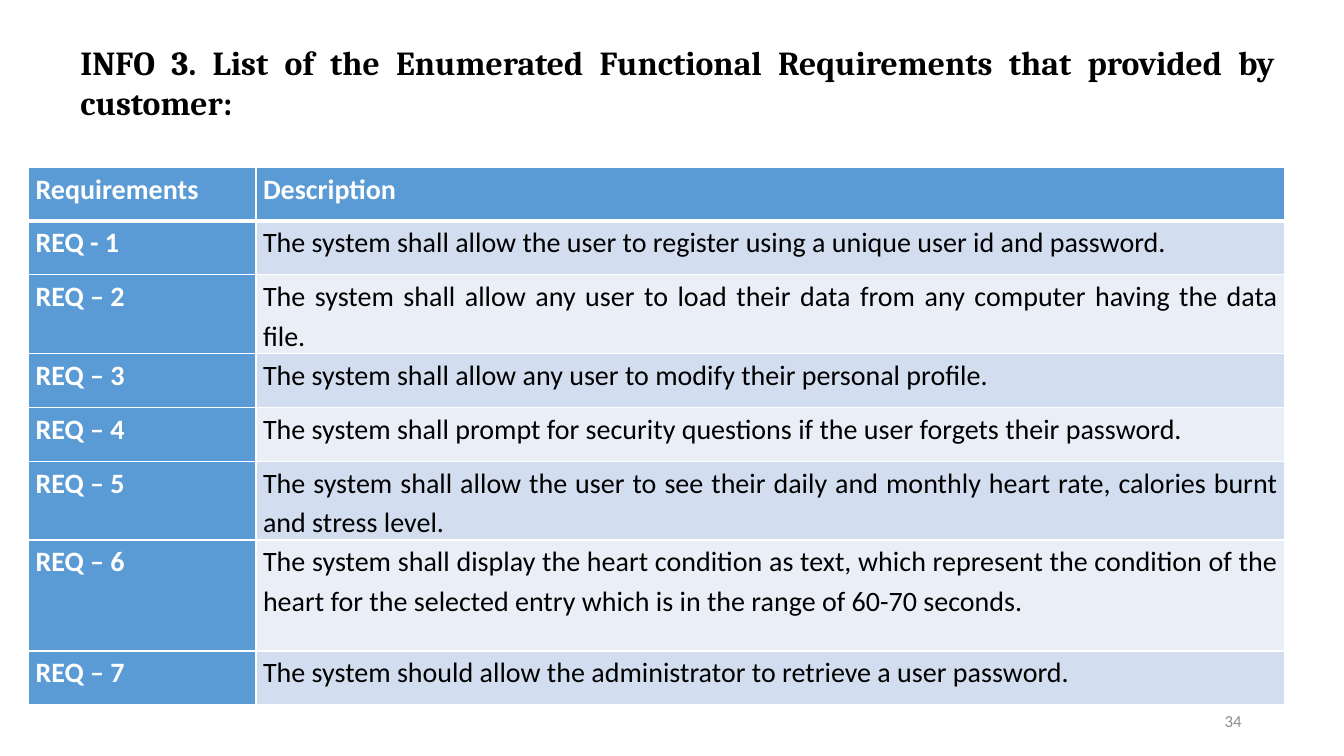
import pptx
import pptx.dml.color
import pptx.enum.text
import pptx.oxml
import pptx.oxml.ns
import pptx.util

Pt = pptx.util.Pt
ALIGN = pptx.enum.text.PP_ALIGN
ANCHOR = pptx.enum.text.MSO_ANCHOR

WHITE, BLACK, GRAY = "FFFFFF", "000000", "8C8C8C"
BLUE, BANDS = "5B9BD5", ("D2DEEF", "EAEFF7")
COLUMN_WIDTHS = (162.5, 735)
ROW_HEIGHT, TALL_ROW_HEIGHT, TALL_ROW = 38.4, 79.2, 6

HEADER = ("Requirements", "Description")
REQUIREMENTS = [
    ("REQ - 1", "The system shall allow the user to register using a unique user id and password."),
    ("REQ – 2", "The system shall allow any user to load their data from any computer having the data file."),
    ("REQ – 3", "The system shall allow any user to modify their personal profile."),
    ("REQ – 4", "The system shall prompt for security questions if the user forgets their password."),
    ("REQ – 5", "The system shall allow the user to see their daily and monthly heart rate, "
                "calories burnt and stress level."),
    ("REQ – 6", "The system shall display the heart condition as text, which represent the condition "
                "of the heart for the selected entry which is in the range of 60-70 seconds."),
    ("REQ – 7", "The system should allow the administrator to retrieve a user password."),
]


def rgb(value):
    return pptx.dml.color.RGBColor.from_string(value)


def add_run(p, text, font, size, color, bold=False):
    r = p.add_run()
    r.text = text
    r.font.name, r.font.size, r.font.bold = font, Pt(size), bold
    r.font.color.rgb = rgb(color)


def add_text(slide, box, text, font, size, color, align, anchor, bold=False, top=3.6):
    tf = slide.shapes.add_textbox(*map(Pt, box)).text_frame
    tf.word_wrap = True
    tf.vertical_anchor = anchor
    tf.margin_top = Pt(top)
    p = tf.paragraphs[0]
    p.alignment = align
    add_run(p, text, font, size, color, bold)


def set_borders(cell, bottom=1):
    tcPr = cell._tc.get_or_add_tcPr()
    widths = {"lnL": 1, "lnR": 1, "lnT": 1, "lnB": bottom}
    for i, (tag, width) in enumerate(widths.items()):
        tcPr.insert(i, pptx.oxml.parse_xml(
            f'<a:{tag} {pptx.oxml.ns.nsdecls("a")} w="{Pt(width)}">'
            f'<a:solidFill><a:srgbClr val="{WHITE}"/></a:solidFill></a:{tag}>'))


def fill_cell(cell, text, fill, color, bold, align, bottom=1):
    cell.margin_left = cell.margin_right = Pt(5)
    cell.margin_top = cell.margin_bottom = 0
    cell.fill.solid()
    cell.fill.fore_color.rgb = rgb(fill)
    set_borders(cell, bottom)
    p = cell.text_frame.paragraphs[0]
    p.alignment, p.line_spacing = align, 1.15
    add_run(p, text, "Calibri", 20, color, bold)


def add_requirements_table(slide, left, top):
    count = len(REQUIREMENTS) + 1
    heights = [TALL_ROW_HEIGHT if i == TALL_ROW else ROW_HEIGHT for i in range(count)]
    table = slide.shapes.add_table(count, 2, Pt(left), Pt(top),
                                   Pt(sum(COLUMN_WIDTHS)), Pt(sum(heights))).table
    table.horz_banding = False
    for column, width in zip(table.columns, COLUMN_WIDTHS):
        column.width = Pt(width)
    for row, height in zip(table.rows, heights):
        row.height = Pt(height)

    # Header row
    for col, text in enumerate(HEADER):
        fill_cell(table.cell(0, col), text, BLUE, WHITE, True, ALIGN.LEFT, bottom=3)

    # Requirement rows with alternating bands
    for i, (label, description) in enumerate(REQUIREMENTS):
        fill_cell(table.cell(i + 1, 0), label, BLUE, WHITE, True, ALIGN.LEFT)
        fill_cell(table.cell(i + 1, 1), description, BANDS[i % 2], BLACK, False, ALIGN.JUSTIFY)


def main():
    prs = pptx.Presentation()
    prs.slide_width, prs.slide_height = Pt(960), Pt(540)
    slide = prs.slides.add_slide(prs.slide_layouts[6])

    # Requirements table
    add_requirements_table(slide, 20.4, 119.6)

    # Title
    add_text(slide, (50.4, 25.2, 866.9, 94.4),
             "INFO 3. List of the Enumerated Functional Requirements that provided by customer:",
             "Cambria", 24, BLACK, ALIGN.JUSTIFY, ANCHOR.TOP, bold=True, top=4.5)

    # Slide number
    add_text(slide, (678, 500.4, 216, 28.8), "34", "Calibri", 12, GRAY, ALIGN.RIGHT, ANCHOR.MIDDLE)

    prs.save("out.pptx")


if __name__ == "__main__":
    main()
